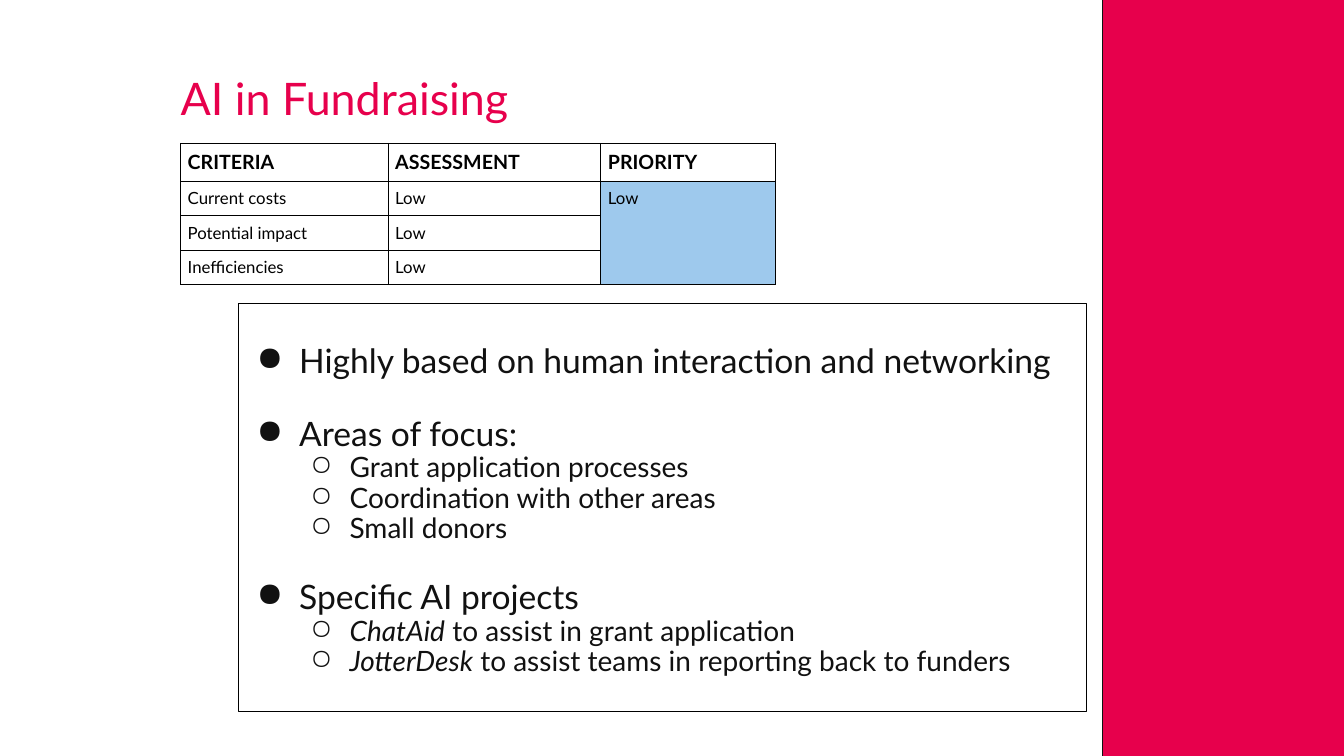
from dataclasses import dataclass
from lxml import etree
from pptx import Presentation
from pptx import util as u
from pptx.dml.color import RGBColor
from pptx.enum import shapes, text
from pptx.oxml import ns

# Content
TITLE = "AI in Fundraising"
ROWS = [
    ("CRITERIA", "ASSESSMENT", "PRIORITY"),
    ("Current costs", "Low", "Low"),
    ("Potential impact", "Low", ""),
    ("Inefficiencies", "Low", ""),
]
# Each point: level, italic lead, plain text
POINTS = [
    (0, "", "Highly based on human interaction and networking"),
    (0, "", "Areas of focus:"),
    (1, "", "Grant application processes"),
    (1, "", "Coordination with other areas"),
    (1, "", "Small donors"),
    (0, "", "Specific AI projects"),
    (1, "ChatAid", " to assist in grant application"),
    (1, "JotterDesk", " to assist teams in reporting back to funders"),
]


@dataclass
class Theme:
    font: str = "Lato"
    pink: str = "E7004C"
    blue: str = "9EC9ED"
    ink: str = "111111"
    black: str = "000000"
    title: int = 32
    head: int = 14
    cell: int = 12
    points: tuple = (24, 20)
    line: float = 0.75
    grid: float = 0.5


T = Theme()
LEFT = 4.55
COLS = (5.23, 5.36, 4.39)
HEIGHTS = (0.95, 0.86, 0.86, 0.86)
INDENTS = ((1.27, -1.07), (2.54, -0.99))
MARKS = "●○"


def rgb(code):
    return RGBColor.from_string(code)


def style(run, size, color, bold=False, italic=False):
    font = run.font
    font.name, font.size, font.color.rgb = T.font, u.Pt(size), rgb(color)
    font.bold, font.italic = bold, italic


def add(parent, tag, **attrs):
    return etree.SubElement(parent, ns.qn(tag), **attrs)


def outline(shape, color):
    shape.line.color.rgb = rgb(color)
    shape.line.width = u.Pt(T.line)


def box(slide, place, pads):
    shape = slide.shapes.add_textbox(*map(u.Cm, place))
    frame = shape.text_frame
    frame.word_wrap = True
    frame.vertical_anchor = text.MSO_ANCHOR.TOP
    frame.margin_left = frame.margin_right = u.Cm(pads[0])
    frame.margin_top, frame.margin_bottom = u.Cm(pads[1]), u.Cm(pads[2])
    return shape


def bullet(para, level):
    left, hang = INDENTS[level]
    props = para._p.get_or_add_pPr()
    props.set("marL", str(u.Cm(left)))
    props.set("indent", str(u.Cm(hang)))
    add(add(props, "a:buClr"), "a:srgbClr", val=T.ink)
    add(props, "a:buChar", char=MARKS[level])


def borders(cell):
    props = cell._tc.get_or_add_tcPr()
    for side in "LRTB":
        line = add(props, f"a:ln{side}", w=str(u.Pt(T.grid)))
        add(add(line, "a:solidFill"), "a:srgbClr", val=T.black)


def add_title(slide):
    frame = box(slide, (LEFT, 1.93, 22, 1.68), (0, 0, 0)).text_frame
    frame.text = TITLE
    para = frame.paragraphs[0]
    para.line_spacing = 0.9
    style(para.runs[0], T.title, T.pink)


def add_points(slide):
    shape = box(slide, (6.02, 7.65, 21.36, 10.29), (0.25, 1.04, 0.13))
    outline(shape, T.black)
    frame = shape.text_frame
    for i, (level, lead, rest) in enumerate(POINTS):
        para = frame.add_paragraph() if i else frame.paragraphs[0]
        para.level = level
        bullet(para, level)
        para.line_spacing = 0.9
        if i and level == 0:
            para.space_before = u.Pt(26)
        for words, italic in ((lead, True), (rest, False)):
            if words:
                run = para.add_run()
                run.text = words
                style(run, T.points[level], T.ink, italic=italic)


def add_grid(slide):
    table = slide.shapes.add_table(
        len(ROWS), len(COLS), u.Cm(LEFT), u.Cm(3.61),
        u.Cm(sum(COLS)), u.Cm(sum(HEIGHTS))).table
    table.first_row = table.horz_banding = False
    for col, width in zip(table.columns, COLS):
        col.width = u.Cm(width)
    for row, height in zip(table.rows, HEIGHTS):
        row.height = u.Cm(height)
    for r, row in enumerate(ROWS):
        for c, words in enumerate(row):
            cell = table.cell(r, c)
            cell.margin_left = cell.margin_right = u.Cm(0.18)
            cell.margin_top = cell.margin_bottom = u.Cm(0.18)
            borders(cell)
            if r and c == 2:
                cell.fill.solid()
                cell.fill.fore_color.rgb = rgb(T.blue)
            else:
                cell.fill.background()
            if words:
                cell.text = words
                para = cell.text_frame.paragraphs[0]
                para.alignment = text.PP_ALIGN.JUSTIFY
                style(para.runs[0], T.cell if r else T.head, T.black, bold=r == 0)
    # One priority covers all criteria
    table.cell(1, 2).merge(table.cell(3, 2))


def add_band(slide):
    band = slide.shapes.add_shape(
        shapes.MSO_SHAPE.RECTANGLE, *map(u.Cm, (27.79, -0.15, 6.58, 19.35)))
    band.shadow.inherit = False
    band.fill.solid()
    band.fill.fore_color.rgb = rgb(T.pink)
    outline(band, T.ink)


def main():
    deck = Presentation()
    deck.slide_width, deck.slide_height = u.Cm(33.87), u.Cm(19.05)
    slide = deck.slides.add_slide(deck.slide_layouts[6])
    add_title(slide)
    add_points(slide)
    add_grid(slide)
    add_band(slide)
    deck.save("out.pptx")


if __name__ == "__main__":
    main()
